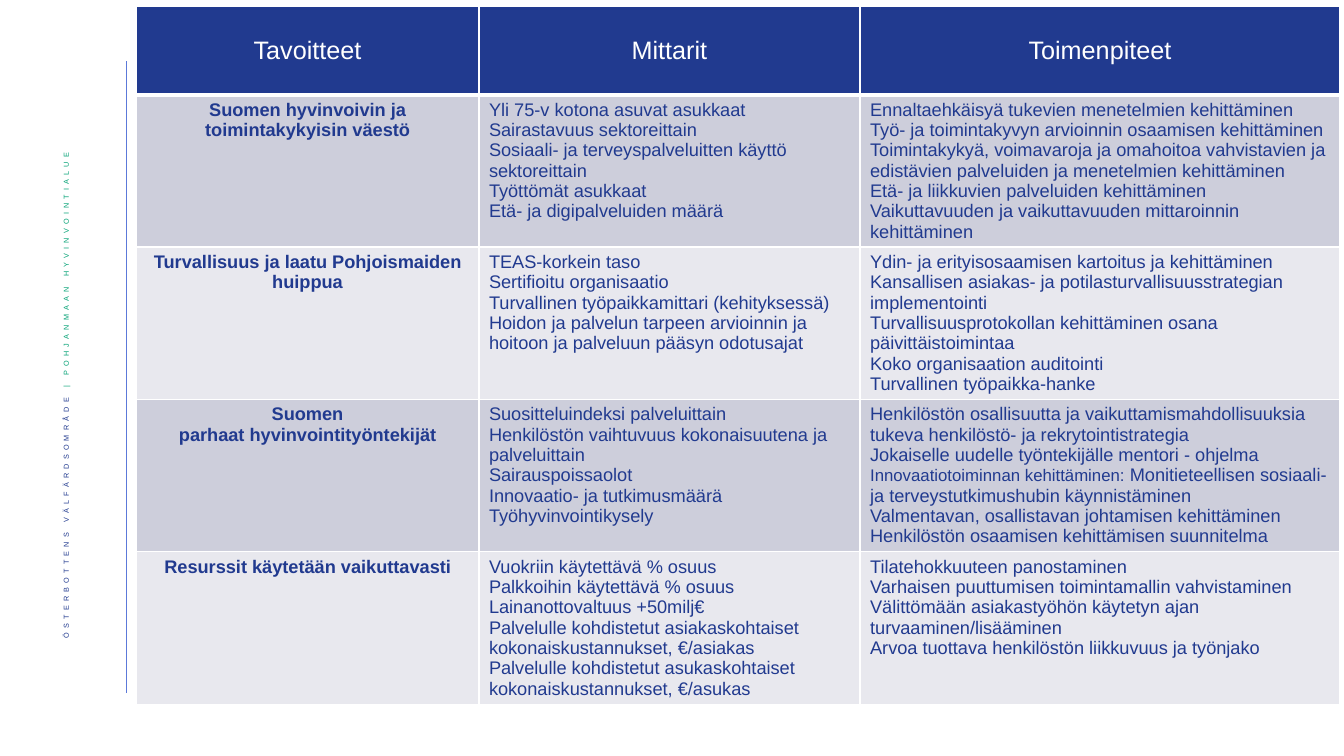
from lxml.etree import SubElement
from pptx import Presentation
from pptx.dml.color import RGBColor as Rgb
from pptx.enum.shapes import MSO_CONNECTOR as Connector
from pptx.enum.text import MSO_ANCHOR as Anchor, PP_ALIGN as Align
from pptx.oxml.ns import qn
from pptx.util import Inches, Pt

COLORS = {"navy": "213A8F", "green": "00A174", "rule": "5C79D9",
          "white": "FFFFFF", "dark_band": "CDCEDB", "light_band": "E8E8EE"}
FONT = "Arial"
COLUMN_WIDTHS = [3.4, 3.78, 4.76]
HEADER_HEIGHT, GOAL_HEIGHT = 0.88, 1.51
TABLE_LEFT, TABLE_TOP = 1.35, 0.06
HEADINGS = ["Tavoitteet", "Mittarit", "Toimenpiteet"]
SMALL_LEAD = "Innovaatiotoiminnan kehittäminen: "
GOALS = [
    (["Suomen hyvinvoivin ja toimintakykyisin väestö"],
     ["Yli 75-v kotona asuvat asukkaat",
      "Sairastavuus sektoreittain",
      "Sosiaali- ja terveyspalveluitten käyttö sektoreittain",
      "Työttömät asukkaat",
      "Etä- ja digipalveluiden määrä"],
     ["Ennaltaehkäisyä tukevien menetelmien kehittäminen",
      "Työ- ja toimintakyvyn arvioinnin osaamisen kehittäminen",
      "Toimintakykyä, voimavaroja ja omahoitoa vahvistavien ja edistävien "
      "palveluiden ja menetelmien kehittäminen",
      "Etä- ja liikkuvien palveluiden kehittäminen",
      "Vaikuttavuuden ja vaikuttavuuden mittaroinnin kehittäminen"]),
    (["Turvallisuus ja laatu Pohjoismaiden huippua"],
     ["TEAS-korkein taso",
      "Sertifioitu organisaatio",
      "Turvallinen työpaikkamittari (kehityksessä)",
      "Hoidon ja palvelun tarpeen arvioinnin ja hoitoon ja palveluun "
      "pääsyn odotusajat"],
     ["Ydin- ja erityisosaamisen kartoitus ja kehittäminen",
      "Kansallisen asiakas- ja potilasturvallisuusstrategian implementointi",
      "Turvallisuusprotokollan kehittäminen osana päivittäistoimintaa",
      "Koko organisaation auditointi",
      "Turvallinen työpaikka-hanke"]),
    (["Suomen", "parhaat hyvinvointityöntekijät"],
     ["Suositteluindeksi palveluittain",
      "Henkilöstön vaihtuvuus kokonaisuutena ja palveluittain",
      "Sairauspoissaolot",
      "Innovaatio- ja tutkimusmäärä",
      "Työhyvinvointikysely"],
     ["Henkilöstön osallisuutta ja vaikuttamismahdollisuuksia tukeva "
      "henkilöstö- ja rekrytointistrategia",
      "Jokaiselle uudelle työntekijälle mentori - ohjelma",
      SMALL_LEAD + "Monitieteellisen sosiaali- ja terveystutkimushubin "
      "käynnistäminen",
      "Valmentavan, osallistavan johtamisen kehittäminen",
      "Henkilöstön osaamisen kehittämisen suunnitelma"]),
    (["Resurssit käytetään vaikuttavasti"],
     ["Vuokriin käytettävä % osuus",
      "Palkkoihin käytettävä % osuus",
      "Lainanottovaltuus +50milj€",
      "Palvelulle kohdistetut asiakaskohtaiset kokonaiskustannukset, €/asiakas",
      "Palvelulle kohdistetut asukaskohtaiset kokonaiskustannukset, €/asukas"],
     ["Tilatehokkuuteen panostaminen",
      "Varhaisen puuttumisen toimintamallin vahvistaminen Välittömään "
      "asiakastyöhön käytetyn ajan turvaaminen/lisääminen",
      "Arvoa tuottava henkilöstön liikkuvuus ja työnjako"]),
]


def color(name):
    return Rgb.from_string(COLORS[name])


def set_font(font, size, color_name, bold=False):
    font.name, font.size, font.bold = FONT, Pt(size), bold
    font.color.rgb = color(color_name)


def add_borders(cell, bottom_width):
    properties = cell._tc.get_or_add_tcPr()
    for side, width in zip("LRTB", (1, 1, 1, bottom_width)):
        border = SubElement(properties, qn(f"a:ln{side}"), w=str(Pt(width)))
        fill = SubElement(border, qn("a:solidFill"))
        SubElement(fill, qn("a:srgbClr"), val=COLORS["white"])


def fill_cell(cell, lines, band, size, text_color, centered, bold=False, bottom_width=1):
    add_borders(cell, bottom_width)
    cell.fill.solid()
    cell.fill.fore_color.rgb = color(band)
    frame = cell.text_frame
    for index, line in enumerate(lines):
        paragraph = frame.add_paragraph() if index else frame.paragraphs[0]
        paragraph.alignment = Align.CENTER if centered else Align.LEFT
        set_font(paragraph.font, size, text_color, bold)
        if line.startswith(SMALL_LEAD):
            lead = paragraph.add_run()
            lead.text = SMALL_LEAD
            lead.font.size = Pt(12)
            line = line.removeprefix(SMALL_LEAD)
        paragraph.add_run().text = line


def add_goal_table(slide):
    heights = [HEADER_HEIGHT] + [GOAL_HEIGHT] * len(GOALS)
    table = slide.shapes.add_table(
        len(heights), len(COLUMN_WIDTHS), Inches(TABLE_LEFT), Inches(TABLE_TOP),
        Inches(sum(COLUMN_WIDTHS)), Inches(sum(heights))).table
    for column, width in zip(table.columns, COLUMN_WIDTHS):
        column.width = Inches(width)
    for row, height in zip(table.rows, heights):
        row.height = Inches(height)
    for column, heading in enumerate(HEADINGS):
        cell = table.cell(0, column)
        fill_cell(cell, [heading], "navy", 18, "white", True, bottom_width=3)
        cell.vertical_anchor = Anchor.MIDDLE
    for row, goal in enumerate(GOALS, 1):
        band = "dark_band" if row % 2 else "light_band"
        for column, lines in enumerate(goal):
            is_goal = column == 0
            fill_cell(table.cell(row, column), lines, band, 13, "navy", is_goal, is_goal)


def add_side_rule(slide):
    rule = slide.shapes.add_connector(
        Connector.STRAIGHT, Inches(1.25), Inches(0.61), Inches(1.25), Inches(6.88))
    rule.line.color.rgb = color("rule")
    rule.line.width = Pt(0.5)
    SubElement(rule._element.spPr, qn("a:effectLst"))


def add_side_label(slide):
    label = slide.shapes.add_textbox(Inches(0.42), Inches(1.42), Inches(0.52), Inches(5.73))
    frame = label.text_frame
    frame.word_wrap = True
    frame.vertical_anchor = Anchor.MIDDLE
    frame._txBody.bodyPr.set("vert", "vert270")
    paragraph = frame.paragraphs[0]
    paragraph.alignment = Align.RIGHT
    paragraph.line_spacing = 0.9
    for text, color_name in (("ÖSTERBOTTENS VÄLFÄRDSOMRÅDE ", "navy"),
                             ("| POHJANMAAN HYVINVOINTIALUE", "green")):
        run = paragraph.add_run()
        run.text = text
        set_font(run.font, 9, color_name)
        properties = run._r.get_or_add_rPr()
        properties.set("baseline", "30000")
        properties.set("spc", "300")


def main():
    deck = Presentation()
    deck.slide_width, deck.slide_height = Inches(13.33), Inches(7.5)
    slide = deck.slides.add_slide(deck.slide_layouts[6])
    add_side_rule(slide)
    add_side_label(slide)
    add_goal_table(slide)
    deck.save("out.pptx")


if __name__ == "__main__":
    main()
